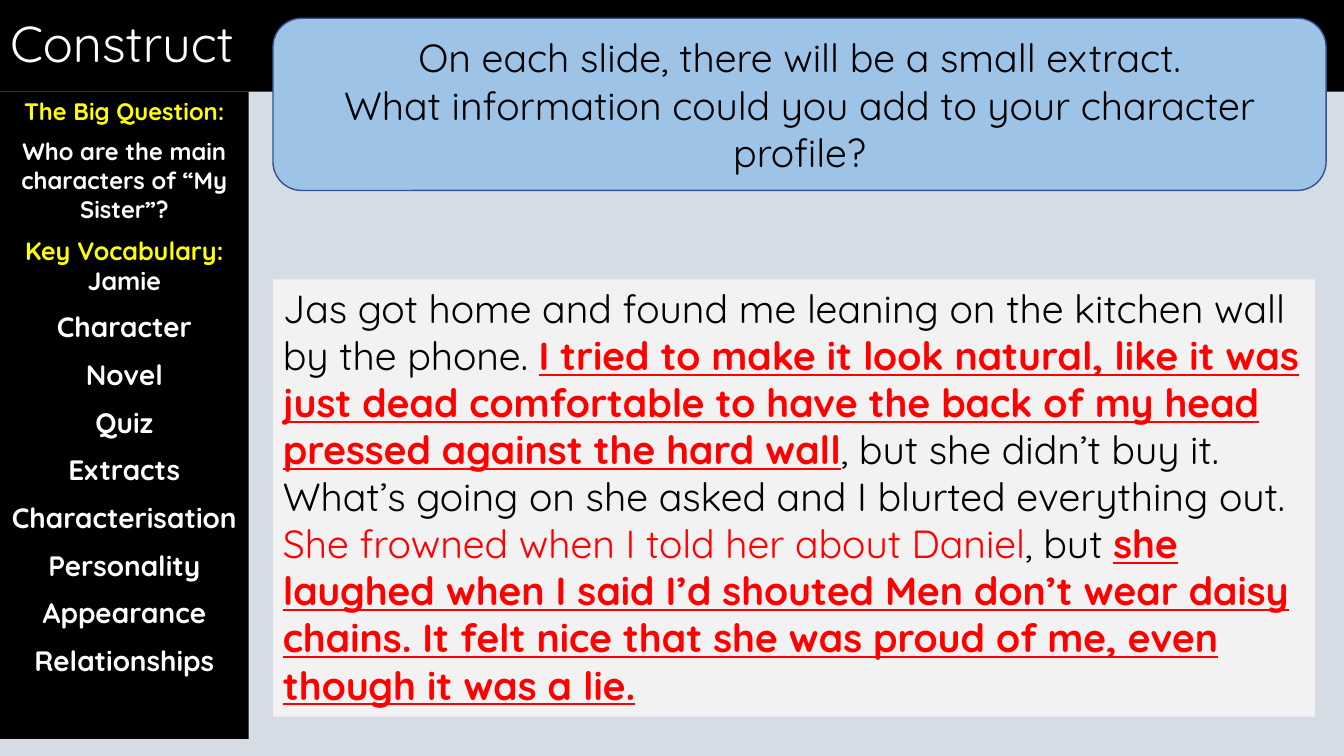
from pptx import Presentation
from pptx.dml.color import RGBColor
from pptx.enum.shapes import MSO_SHAPE
from pptx.enum.text import MSO_ANCHOR, MSO_AUTO_SIZE, PP_ALIGN
from pptx.util import Cm, Pt

RECTANGLE, ROUNDED = MSO_SHAPE.RECTANGLE, MSO_SHAPE.ROUNDED_RECTANGLE
TOP, MIDDLE = MSO_ANCHOR.TOP, MSO_ANCHOR.MIDDLE
LEFT, CENTER = PP_ALIGN.LEFT, PP_ALIGN.CENTER
NO_AUTOSIZE = MSO_AUTO_SIZE.NONE

FONT = "Quicksand"
BLACK, WHITE, YELLOW, RED = "000000", "FFFFFF", "FFFF00", "FF0000"
BACKDROP, PANEL_BLUE, PANEL_EDGE, PAPER = "D6DCE5", "9DC3E6", "325491", "F2F2F2"

SLIDE_WIDTH, SLIDE_HEIGHT = Cm(33.87), Cm(19.05)
HEADER_HEIGHT = Cm(2.31)
CONTENT_LEFT = Cm(6.88)
HEADER_BOX = (0, 0, SLIDE_WIDTH, HEADER_HEIGHT)
PROMPT_BOX = (CONTENT_LEFT, Cm(0.46), Cm(26.54), Cm(4.34))
EXTRACT_BOX = (CONTENT_LEFT, Cm(7.04), Cm(26.26), Cm(11.02))
SIDEBAR_BOX = (0, HEADER_HEIGHT, Cm(6.27), Cm(16.31))

PLAIN = {"size": Pt(28), "color": BLACK}
TOLD = {"size": Pt(28), "color": RED}
MARKED = {**TOLD, "bold": True, "underline": True}

PROMPT = [
    "On each slide, there will be a small extract.",
    "What information could you add to your character profile?",
]
EXTRACT = [
    ("Jas got home and found me leaning on the kitchen wall by the phone. ", PLAIN),
    ("I tried to make it look natural, like it was just dead comfortable "
     "to have the back of my head pressed against the hard wall", MARKED),
    (", but she didn’t buy it. What’s going on she asked and I blurted everything out. ", PLAIN),
    ("She frowned when I told her about Daniel", TOLD),
    (", but ", PLAIN),
    ("she laughed when I said I’d shouted Men don’t wear daisy chains. "
     "It felt nice that she was proud of me, even though it was a lie.", MARKED),
]
VOCABULARY = [
    "Character", "Novel", "Quiz", "Extracts", "Characterisation",
    "Personality", "Appearance", "Relationships",
]


def rgb(value):
    return RGBColor.from_string(value)


def fill_with(target, color):
    target.fill.solid()
    target.fill.fore_color.rgb = rgb(color)


def write(shape, paragraphs, anchor, para_format):
    frame = shape.text_frame
    frame.word_wrap = True
    frame.auto_size = NO_AUTOSIZE
    frame.vertical_anchor = anchor
    for index, spans in enumerate(paragraphs):
        para = frame.add_paragraph() if index else frame.paragraphs[0]
        space_before = spans[0][1].get("gap", 0) if index else 0
        for name, value in {**para_format, "space_before": space_before}.items():
            setattr(para, name, value)
        for text, span_format in spans:
            span = para.add_run()
            span.text = text
            span.font.name = FONT
            span.font.color.rgb = rgb(span_format["color"])
            for name in ("size", "bold", "underline"):
                setattr(span.font, name, span_format.get(name, False))


def add_panel(page, box, kind, color, edge=None):
    panel = page.shapes.add_shape(kind, *box)
    panel.shadow.inherit = False
    fill_with(panel, color)
    if edge:
        panel.line.color.rgb = rgb(edge)
        panel.line.width = Pt(1)
    else:
        panel.line.fill.background()
    return panel


def add_header(page, box):
    title = page.shapes.title
    title.left, title.top, title.width, title.height = box
    fill_with(title, BLACK)
    heading = {"size": Pt(36), "color": WHITE}
    write(title, [[("Construct", heading)]], MIDDLE,
          {"alignment": LEFT, "line_spacing": 0.9})


def add_prompt(page, box):
    panel = add_panel(page, box, ROUNDED, PANEL_BLUE, PANEL_EDGE)
    write(panel, [[(text, PLAIN)] for text in PROMPT], MIDDLE, {"alignment": CENTER})


def add_extract(page, box):
    panel = add_panel(page, box, RECTANGLE, PAPER)
    write(panel, [EXTRACT], TOP, {"alignment": LEFT})


def side_format(size, color):
    return {"size": Pt(size), "color": color, "bold": True, "gap": Pt(size / 2)}


def add_sidebar(page, box):
    panel = add_panel(page, box, RECTANGLE, BLACK)
    paragraphs = [
        [("The Big Question:", side_format(17, YELLOW))],
        [("Who are the main characters of “My Sister”?", side_format(17, WHITE))],
        [("Key Vocabulary: ", side_format(18, YELLOW)), ("Jamie", side_format(18, WHITE))],
    ]
    paragraphs += [[(word, side_format(20, WHITE))] for word in VOCABULARY]
    write(panel, paragraphs, TOP, {"alignment": CENTER})


def main():
    deck = Presentation()
    deck.slide_width, deck.slide_height = SLIDE_WIDTH, SLIDE_HEIGHT
    page = deck.slides.add_slide(deck.slide_layouts.get_by_name("Title Only"))
    fill_with(page.background, BACKDROP)
    add_header(page, HEADER_BOX)
    add_prompt(page, PROMPT_BOX)
    add_extract(page, EXTRACT_BOX)
    add_sidebar(page, SIDEBAR_BOX)
    deck.save("out.pptx")


if __name__ == "__main__":
    main()
